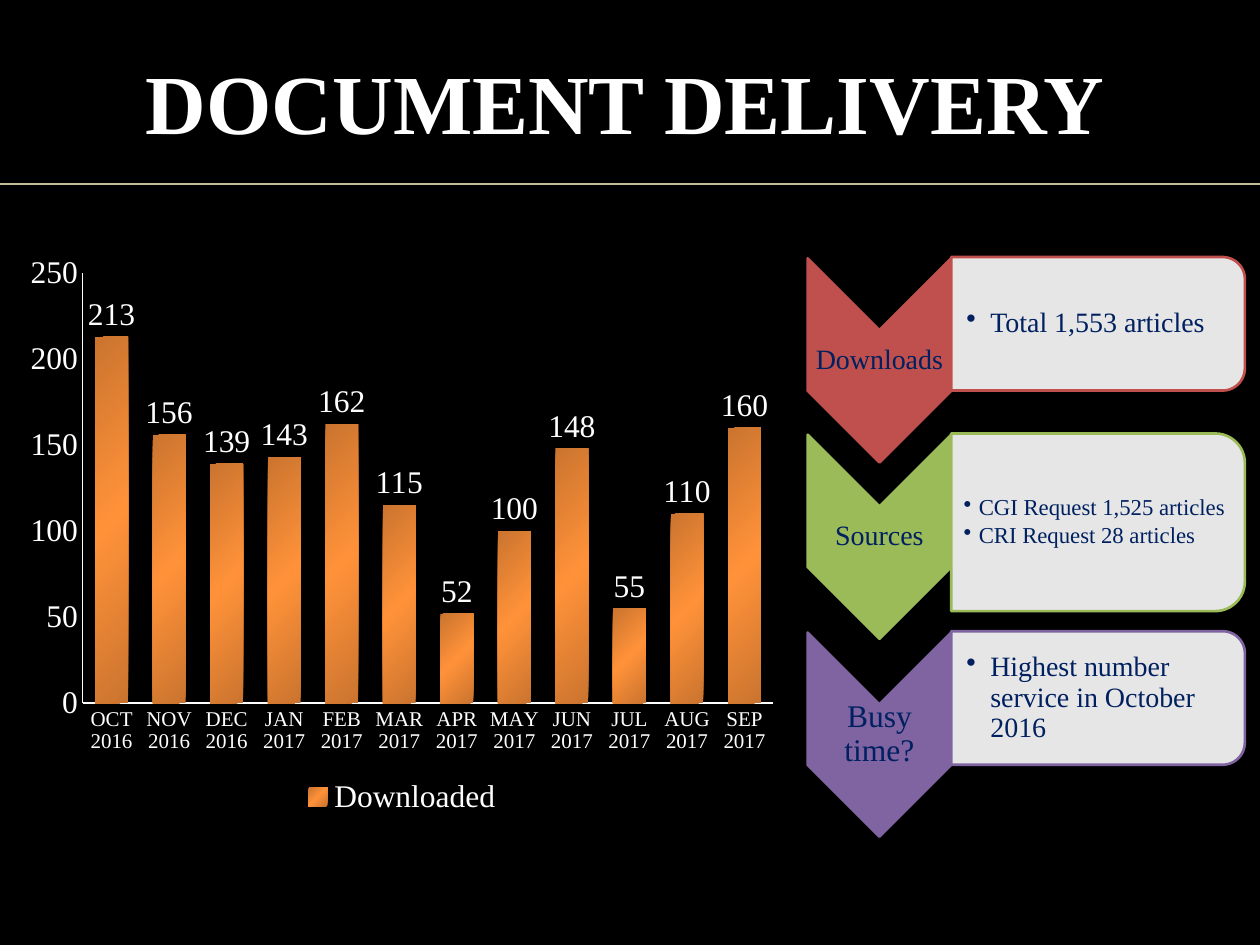
from copy import deepcopy

from lxml import etree
from pptx import Presentation
from pptx.chart.data import CategoryChartData
from pptx.dml.color import RGBColor
from pptx.enum.chart import XL_CHART_TYPE, XL_LABEL_POSITION, XL_LEGEND_POSITION, XL_TICK_MARK
from pptx.enum.shapes import MSO_CONNECTOR, MSO_SHAPE
from pptx.enum.text import MSO_ANCHOR, PP_ALIGN
from pptx.oxml.ns import qn
from pptx.util import Inches, Pt

COLUMNS = XL_CHART_TYPE.COLUMN_CLUSTERED
OUTSIDE = XL_LABEL_POSITION.OUTSIDE_END
BOTTOM = XL_LEGEND_POSITION.BOTTOM
NO_TICK = XL_TICK_MARK.NONE
STRAIGHT = MSO_CONNECTOR.STRAIGHT
CHEVRON = MSO_SHAPE.CHEVRON
ROUND_SIDE = MSO_SHAPE.ROUND_2_SAME_RECTANGLE
MIDDLE = MSO_ANCHOR.MIDDLE
CENTER = PP_ALIGN.CENTER
LEFT = PP_ALIGN.LEFT

FONT = "Times New Roman"
WHITE, BLACK, NAVY, SAND = "FFFFFF", "000000", "002060", "C4BD97"
BAR_STOPS = [(0, "CB742F"), (0.5, "FF9239"), (1, "CB742F")]

MONTHS = ["OCT 2016", "NOV 2016", "DEC 2016"] + [
    f"{month} 2017" for month in "JAN FEB MAR APR MAY JUN JUL AUG SEP".split()
]
DOWNLOADS = [213, 156, 139, 143, 162, 115, 52, 100, 148, 55, 110, 160]

ROWS = [
    dict(top=2.04, height=1.06, color="C0504D", label="Downloads", label_size=16,
         lines=["Total 1,553 articles"], size=16, indent=0.19, inset=0.12),
    dict(top=3.44, height=1.41, color="9BBB59", label="Sources", label_size=16,
         lines=["CGI Request 1,525 articles", "CRI Request 28 articles"],
         size=13, indent=0.12, inset=0.1),
    dict(top=5.01, height=1.06, color="8064A2", label="Busy time?", label_size=18,
         lines=["Highest number service in October 2016"], size=16, indent=0.19, inset=0.12),
]


def rgb(value):
    """Turn a hex string into a colour."""
    return RGBColor.from_string(value)


def set_values(target, values):
    """Set attributes of an object from a dict."""
    for name, value in values.items():
        setattr(target, name, value)


def style_font(font, size, color, bold=False):
    """Give a font the deck's typeface with a size and colour."""
    set_values(font, dict(name=FONT, size=Pt(size), bold=bold))
    font.color.rgb = rgb(color)


def add_text(page, box, lines, size, color, align=CENTER, bold=False, spacing=0.9,
             inset=0.01, left_inset=0.01, indent=None):
    """Add a middle-anchored text box, bulleted when an indent is given."""
    frame = page.shapes.add_textbox(*map(Inches, box)).text_frame
    margin = Inches(inset)
    set_values(frame, dict(word_wrap=True, vertical_anchor=MIDDLE, margin_left=Inches(left_inset),
                           margin_right=margin, margin_top=margin, margin_bottom=margin))
    for index, line in enumerate(lines):
        para = frame.add_paragraph() if index else frame.paragraphs[0]
        set_values(para, dict(alignment=align, line_spacing=spacing))
        span = para.add_run()
        span.text = line
        style_font(span.font, size, color, bold)
        if indent:
            para.space_after = Pt(2)
            properties = para._p.get_or_add_pPr()
            properties.set("marL", str(Inches(indent)))
            properties.set("indent", str(-Inches(indent)))
            etree.SubElement(properties, qn("a:buChar")).set("char", "•")


def add_turned_shape(page, kind, box, fill, line, opacity=100):
    """Add a shape turned a quarter clockwise so that it covers the given box."""
    left, top, width, height = box
    middle_x, middle_y = left + width / 2, top + height / 2
    turned = (middle_x - height / 2, middle_y - width / 2, height, width)
    shape = page.shapes.add_shape(kind, *map(Inches, turned))
    shape.rotation = 90
    shape.shadow.inherit = False
    shape.fill.solid()
    shape.fill.fore_color.rgb = rgb(fill)
    shape.line.color.rgb = rgb(line)
    shape.line.width = Pt(1.5)
    if opacity < 100:
        color = shape._element.spPr.find(qn("a:solidFill"))[0]
        etree.SubElement(color, qn("a:alpha")).set("val", str(opacity * 1000))


def add_header(page, box):
    """Add the title and the full-width rule beneath it."""
    add_text(page, box, ["DOCUMENT DELIVERY"], 48, WHITE, bold=True,
             spacing=1.0, inset=0.05, left_inset=0.05)
    rule_y = Inches(box[1] + box[3] + 0.15)
    rule = page.shapes.add_connector(STRAIGHT, 0, rule_y, Inches(10), rule_y)
    rule.line.color.rgb = rgb(SAND)
    rule.line.width = Pt(1)
    etree.SubElement(rule._element.spPr, qn("a:effectLst"))


def fill_bars(series):
    """Shade the columns with a diagonal three-stop gradient."""
    fill = series.format.fill
    fill.gradient()
    fill.gradient_angle = 315
    stop_list = series._element.xpath(".//a:gsLst")[0]
    stop_list.append(deepcopy(stop_list[-1]))
    for stop, (position, color) in zip(fill.gradient_stops, BAR_STOPS):
        stop.position = position
        stop.color.rgb = rgb(color)


def add_download_chart(page, box):
    """Add the monthly column chart of downloads."""
    data = CategoryChartData()
    data.categories = MONTHS
    data.add_series("Downloaded", DOWNLOADS)
    chart = page.shapes.add_chart(COLUMNS, *map(Inches, box), data).chart
    style_font(chart.font, 18, WHITE)
    set_values(chart, dict(has_title=False, has_legend=True))
    set_values(chart.legend, dict(position=BOTTOM, include_in_layout=False))
    style_font(chart.legend.font, 18, WHITE)
    for axis, size in ((chart.category_axis, 12), (chart.value_axis, 18)):
        set_values(axis, dict(major_tick_mark=NO_TICK, minor_tick_mark=NO_TICK,
                              has_major_gridlines=False))
        style_font(axis.tick_labels.font, size, WHITE)
        axis.format.line.color.rgb = rgb(WHITE)
        axis.format.line.width = Pt(0.75)
    set_values(chart.value_axis, dict(minimum_scale=0, maximum_scale=250, major_unit=50))
    plot = chart.plots[0]
    set_values(plot, dict(gap_width=75, vary_by_categories=False, has_data_labels=True))
    set_values(plot.data_labels, dict(show_value=True, position=OUTSIDE))
    style_font(plot.data_labels.font, 18, WHITE)
    fill_bars(plot.series[0])


def add_summary_row(page, box, row):
    """Add a labelled chevron with its rounded panel of bullets."""
    left, top, width, height = box
    chevron_width, chevron_height, label_height = 1.14, 1.62, 0.49
    add_turned_shape(page, CHEVRON, (left, top + 0.01, chevron_width, chevron_height),
                     row["color"], row["color"])
    label_top = top + 0.01 + (chevron_height - label_height) / 2
    add_text(page, (left, label_top, chevron_width, label_height),
             [row["label"]], row["label_size"], NAVY)
    panel_left, panel_width = left + chevron_width, width - chevron_width
    add_turned_shape(page, ROUND_SIDE, (panel_left, top, panel_width, height),
                     WHITE, row["color"], opacity=90)
    add_text(page, (panel_left, top + 0.06, panel_width - 0.06, height - 0.12), row["lines"],
             row["size"], NAVY, align=LEFT, left_inset=row["inset"], indent=row["indent"])


def main():
    """Build the slide and save the deck."""
    deck = Presentation()
    set_values(deck, dict(slide_width=Inches(10), slide_height=Inches(7.5)))
    page = deck.slides.add_slide(deck.slide_layouts[6])
    page.background.fill.solid()
    page.background.fill.fore_color.rgb = rgb(BLACK)
    add_header(page, (0.75, 0.29, 8.43, 1.02))
    add_download_chart(page, (0.12, 1.94, 6.14, 4.57))
    for row in ROWS:
        add_summary_row(page, (6.41, row["top"], 3.47, row["height"]), row)
    deck.save("out.pptx")


if __name__ == "__main__":
    main()
